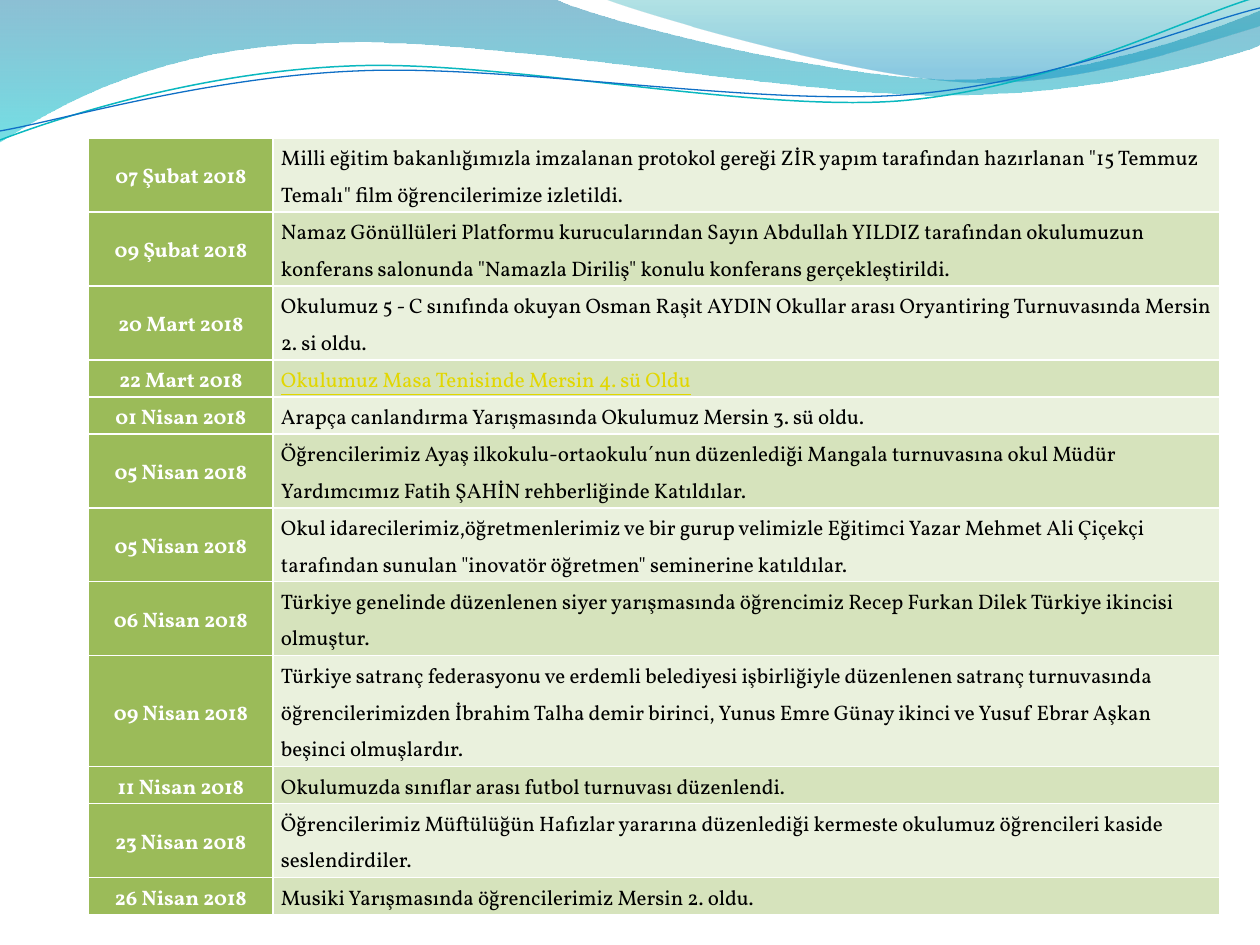
import pptx
import pptx.util
import pptx.dml.color
import pptx.enum.text
from lxml import etree
from pptx.oxml.ns import qn

SLIDE_WIDTH, SLIDE_HEIGHT = 1260, 945
EMU_PER_PX = 914400 / 126

THEME = {
    "font": "Vollkorn", "size": 12, "spacing": 1.25,
    "date_fill": "9BBB59", "date_text": "FFFFFF",
    "bands": ("EAF1DD", "D6E3BC"),
    "text": "000000", "highlight": "E2D700", "border": "FFFFFF",
}

# date, number of text lines, event
EVENTS = [
    ("07 Şubat 2018", 2, "Milli eğitim bakanlığımızla imzalanan protokol gereği ZİR yapım tarafından hazırlanan \"15 Temmuz Temalı\" film öğrencilerimize izletildi."),
    ("09 Şubat 2018", 2, "Namaz Gönüllüleri Platformu kurucularından Sayın Abdullah YILDIZ tarafından okulumuzun konferans salonunda \"Namazla Diriliş\" konulu konferans gerçekleştirildi."),
    ("20 Mart 2018", 2, "Okulumuz 5 - C sınıfında okuyan Osman Raşit AYDIN Okullar arası Oryantiring Turnuvasında Mersin 2. si oldu."),
    ("22 Mart 2018", 1, "Okulumuz Masa Tenisinde Mersin 4. sü Oldu"),
    ("01 Nisan 2018", 1, "Arapça canlandırma Yarışmasında Okulumuz Mersin 3. sü oldu."),
    ("05 Nisan 2018", 2, "Öğrencilerimiz Ayaş ilkokulu-ortaokulu´nun düzenlediği Mangala turnuvasına okul Müdür Yardımcımız Fatih ŞAHİN rehberliğinde Katıldılar."),
    ("05 Nisan 2018", 2, "Okul idarecilerimiz,öğretmenlerimiz ve bir gurup velimizle Eğitimci Yazar Mehmet Ali Çiçekçi tarafından sunulan \"inovatör öğretmen\" seminerine katıldılar."),
    ("06 Nisan 2018", 2, "Türkiye genelinde düzenlenen siyer yarışmasında öğrencimiz Recep Furkan Dilek Türkiye ikincisi olmuştur."),
    ("09 Nisan 2018", 3, "Türkiye satranç federasyonu ve erdemli belediyesi işbirliğiyle düzenlenen satranç turnuvasında öğrencilerimizden İbrahim Talha demir birinci, Yunus Emre Günay ikinci ve Yusuf Ebrar Aşkan beşinci olmuşlardır."),
    ("11 Nisan 2018", 1, "Okulumuzda sınıflar arası futbol turnuvası düzenlendi."),
    ("23 Nisan 2018", 2, "Öğrencilerimiz Müftülüğün Hafızlar yararına düzenlediği kermeste okulumuz öğrencileri kaside seslendirdiler."),
    ("26 Nisan 2018", 1, "Musiki Yarışmasında öğrencilerimiz Mersin 2. oldu."),
]
HIGHLIGHTED_DATE = "22 Mart 2018"

TABLE_LEFT, TABLE_TOP = 88, 138
COLUMN_WIDTHS = (185, 947)
LINE_HEIGHT, INSET_LEFT, INSET_RIGHT = 37, 8, 7

# Each outline is a start point, then one point per straight side
# or three points (two controls and an end) per curve.
# Gradient stops are position, colour, opacity in percent.
WAVES = [
    {"outline": [(0, 0), [(554, -1)],
                 [(600, 21), (837, 79), (955, 79)],
                 [(1074, 79), (1207, 33), (1260, 11)], [(1261, 45)],
                 [(1239, 55), (1096, 96), (940, 95)],
                 [(784, 95), (481, 35), (324, 43)],
                 [(163, 45), (58, 105), (-1, 142)]],
     "stops": [(0, "0074A1", 45), (100, "00C6CF", 55)]},
    {"outline": [(604, -1), [(641, 14), (859, 78), (969, 82)],
                 [(1079, 87), (1211, 40), (1260, 26)], [(1260, 0)]],
     "stops": [(0, "00A1A9", 30), (80, "008BBF", 45)]},
    {"outline": [(0, 140), [(60, 117), (199, 72), (349, 66)],
                 [(498, 59), (747, 112), (898, 101)],
                 [(1050, 89), (1182, 19), (1257, -3)]],
     "line": ("0AB8BF", 0.85)},
    {"outline": [(0, 131), [(59, 121), (207, 77), (357, 71)],
                 [(508, 64), (752, 106), (903, 95)],
                 [(1053, 84), (1186, 26), (1260, 8)]],
     "line": ("0F6FC6", 0.75)},
]


def px(length):
    return pptx.util.Emu(round(length * EMU_PER_PX))


def rgb(value):
    return pptx.dml.color.RGBColor.from_string(value)


def bend(shape, parts):
    """Turn each run of three straight sides that stands for a curve into a Bézier."""
    sides = iter(list(shape.element.iter(qn("a:lnTo"))))
    for part in parts:
        group = [next(sides) for _ in part]
        if len(group) == 3:
            curve = etree.Element(qn("a:cubicBezTo"))
            group[0].addprevious(curve)
            for side in group:
                curve.append(side[0])
                side.getparent().remove(side)


def add_wave(page, outline, stops=None, line=None):
    start, *parts = outline
    builder = page.shapes.build_freeform(*start, scale=EMU_PER_PX)
    builder.add_line_segments([point for part in parts for point in part],
                              close=stops is not None)
    wave = builder.convert_to_shape()
    bend(wave, parts)
    wave.shadow.inherit = False
    if line:
        wave.fill.background()
        wave.line.color.rgb = rgb(line[0])
        wave.line.width = pptx.util.Pt(line[1])
        return
    wave.line.fill.background()
    wave.fill.gradient()
    wave.fill.gradient_angle = 270
    for stop, (position, color, _) in zip(wave.fill.gradient_stops, stops):
        stop.position = position / 100
        stop.color.rgb = rgb(color)
    colors = wave.element.spPr.iter(qn("a:srgbClr"))
    for color, (_, _, opacity) in zip(colors, stops):
        etree.SubElement(color, qn("a:alpha"), val=str(opacity * 1000))


def write(frame, text, color, bold=False, underline=False, align=None):
    para = frame.paragraphs[0]
    para.alignment = align
    para.line_spacing = THEME["spacing"]
    span = para.add_run()
    span.text = text
    font = span.font
    font.name, font.size = THEME["font"], pptx.util.Pt(THEME["size"])
    font.bold, font.underline = bold, underline
    font.color.rgb = rgb(color)


def style_cell(cell, fill):
    cell.margin_left, cell.margin_right = px(INSET_LEFT), px(INSET_RIGHT)
    cell.margin_top = cell.margin_bottom = 0
    cell.vertical_anchor = pptx.enum.text.MSO_ANCHOR.MIDDLE
    properties = cell._tc.get_or_add_tcPr()
    for side in ("lnL", "lnR", "lnT", "lnB"):
        border = etree.SubElement(properties, qn("a:" + side), w=str(pptx.util.Pt(1)))
        solid = etree.SubElement(border, qn("a:solidFill"))
        etree.SubElement(solid, qn("a:srgbClr"), val=THEME["border"])
    cell.fill.solid()
    cell.fill.fore_color.rgb = rgb(fill)


def add_events(page):
    height = LINE_HEIGHT * sum(lines for _, lines, _ in EVENTS)
    table = page.shapes.add_table(len(EVENTS), 2, px(TABLE_LEFT), px(TABLE_TOP),
                                  px(sum(COLUMN_WIDTHS)), px(height)).table
    table.first_row = table.horz_banding = False
    for column, width in zip(table.columns, COLUMN_WIDTHS):
        column.width = px(width)
    for index, (date, lines, event) in enumerate(EVENTS):
        table.rows[index].height = px(lines * LINE_HEIGHT)
        date_cell, event_cell = table.cell(index, 0), table.cell(index, 1)
        style_cell(date_cell, THEME["date_fill"])
        style_cell(event_cell, THEME["bands"][index % 2])
        write(date_cell.text_frame, date, THEME["date_text"], bold=True,
              align=pptx.enum.text.PP_ALIGN.CENTER)
        highlighted = date == HIGHLIGHTED_DATE
        write(event_cell.text_frame, event, THEME["highlight" if highlighted else "text"],
              underline=highlighted)


def main():
    deck = pptx.Presentation()
    deck.slide_width, deck.slide_height = px(SLIDE_WIDTH), px(SLIDE_HEIGHT)
    page = deck.slides.add_slide(deck.slide_layouts[6])
    for wave in WAVES:
        add_wave(page, **wave)
    add_events(page)
    deck.save("out.pptx")


if __name__ == "__main__":
    main()
